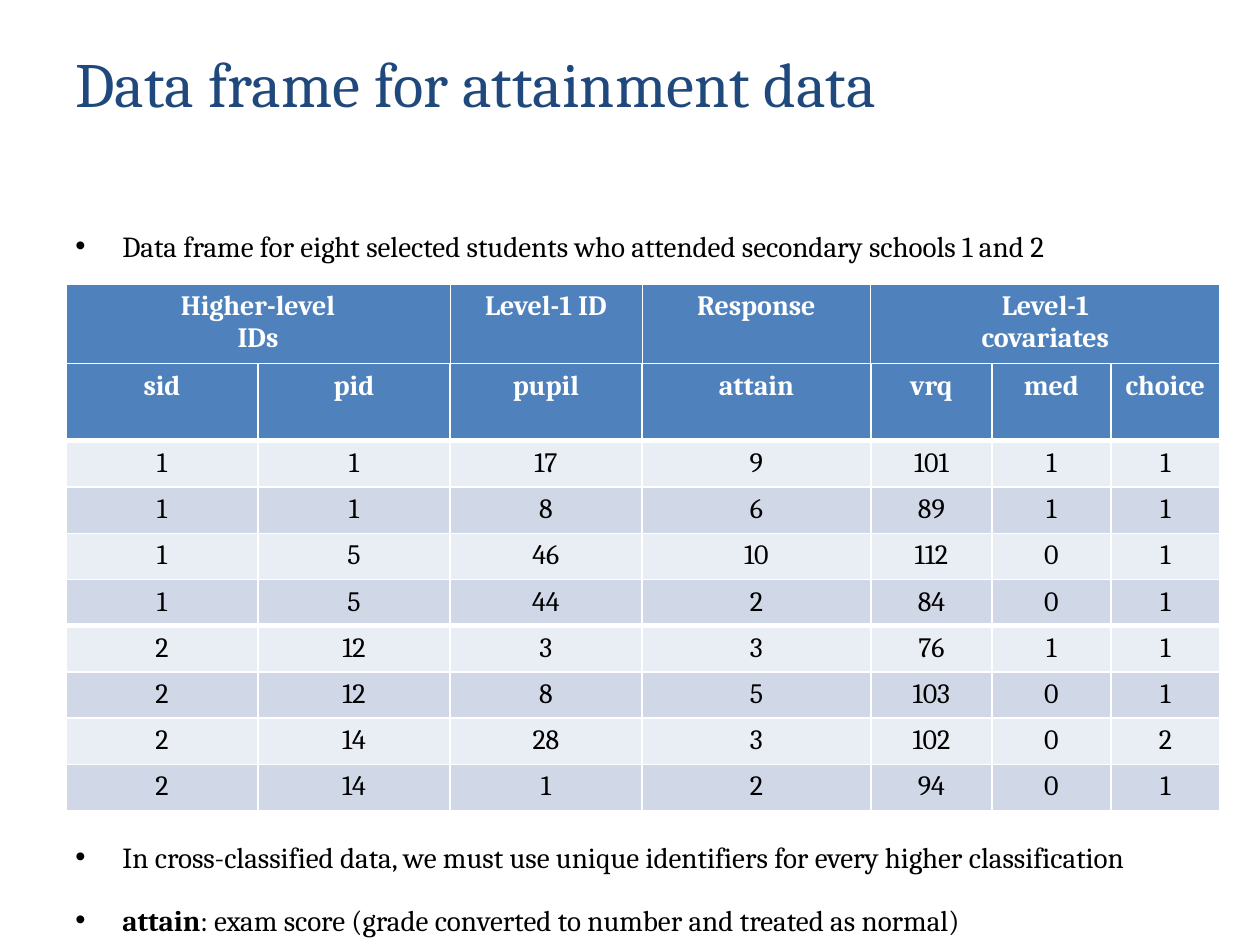
from lxml.etree import SubElement
from pptx import Presentation
from pptx.dml.color import RGBColor
from pptx.enum.text import PP_ALIGN
from pptx.oxml.ns import qn
from pptx.util import Pt

PX = 914400 // 126
FONT = "Cambria"
COLORS = {
    "title": "1F497D",
    "text": "000000",
    "header": "4F81BD",
    "white": "FFFFFF",
    "light": "E9EDF4",
    "dark": "D0D8E8",
}

COLUMN_WIDTHS = [192, 192, 192, 229, 121, 119, 109]
ROW_HEIGHTS = [79, 77] + [46] * 8
# (first column, last column, label); \v is a line break
GROUPS = [
    (0, 1, "Higher-level\vIDs"),
    (2, 2, "Level-1 ID"),
    (3, 3, "Response"),
    (4, 6, "Level-1\vcovariates"),
]
VARIABLES = ["sid", "pid", "pupil", "attain", "vrq", "med", "choice"]
STUDENTS = [
    (1, 1, 17, 9, 101, 1, 1),
    (1, 1, 8, 6, 89, 1, 1),
    (1, 5, 46, 10, 112, 0, 1),
    (1, 5, 44, 2, 84, 0, 1),
    (2, 12, 3, 3, 76, 1, 1),
    (2, 12, 8, 5, 103, 0, 1),
    (2, 14, 28, 3, 102, 0, 2),
    (2, 14, 1, 2, 94, 0, 1),
]
HEADER_ROWS = 2
THICK_BELOW = (1, 5)  # header end and end of school 1


def px(value):
    return value * PX


def color(name):
    return RGBColor.from_string(COLORS[name])


def set_font(paragraph, size, color_name, bold=None):
    font = paragraph.font
    font.name, font.size, font.bold = FONT, Pt(size), bold
    font.color.rgb = color(color_name)


def add_text_frame(slide, left, top, width, height):
    box = slide.shapes.add_textbox(px(left), px(top), px(width), px(height))
    box.text_frame.word_wrap = True
    return box.text_frame


def add_title(slide, text):
    paragraph = add_text_frame(slide, 63, 38, 1134, 157).paragraphs[0]
    paragraph.text = text
    set_font(paragraph, 36, "title")


def add_bullets(slide, top, height, items):
    """Each item is a list of (text, bold) runs."""
    frame = add_text_frame(slide, 63, top, 1134, height)
    for index, runs in enumerate(items):
        paragraph = frame.add_paragraph() if index else frame.paragraphs[0]
        for text, bold in runs:
            run = paragraph.add_run()
            run.text = text
            run.font.bold = bold
        paragraph.space_after = Pt(16)
        set_font(paragraph, 16.6, "text")
        properties = paragraph._p.get_or_add_pPr()
        properties.set("marL", str(px(47)))
        properties.set("indent", str(-px(47)))
        bullet_font = SubElement(properties, qn("a:buFont"), typeface="Arial")
        bullet = SubElement(properties, qn("a:buChar"), char="•")
        default_run = properties.find(qn("a:defRPr"))
        default_run.addprevious(bullet_font)
        default_run.addprevious(bullet)


def border_widths(row):
    """Widths in points of the left, right, top and bottom borders."""
    if row == 0:
        return 0.5, 0.5, 0.5, 0.5
    top = 0.5 if row == 1 else 3 if row - 1 in THICK_BELOW else 1
    return 1, 1, top, 3 if row in THICK_BELOW else 1


def set_borders(cell, widths):
    properties = cell._tc.get_or_add_tcPr()
    for position, (side, width) in enumerate(zip("LRTB", widths)):
        line = SubElement(properties, qn(f"a:ln{side}"), w=str(Pt(width)))
        fill = SubElement(line, qn("a:solidFill"))
        SubElement(fill, qn("a:srgbClr"), val=COLORS["white"])
        properties.insert(position, line)


def style_cell(cell, row):
    is_header = row < HEADER_ROWS
    cell.fill.solid()
    cell.fill.fore_color.rgb = color(
        "header" if is_header else ("light", "dark")[row % 2])
    paragraph = cell.text_frame.paragraphs[0]
    paragraph.alignment = PP_ALIGN.CENTER
    set_font(paragraph, 16, "white" if is_header else "text", is_header)
    set_borders(cell, border_widths(row))


def add_student_table(slide):
    table = slide.shapes.add_table(
        len(ROW_HEIGHTS), len(COLUMN_WIDTHS), px(66), px(284),
        px(sum(COLUMN_WIDTHS)), px(sum(ROW_HEIGHTS))).table
    for column, width in zip(table.columns, COLUMN_WIDTHS):
        column.width = px(width)
    for row, height in zip(table.rows, ROW_HEIGHTS):
        row.height = px(height)
    for first, last, label in GROUPS:
        table.cell(0, first).text = label
        if last > first:
            table.cell(0, first).merge(table.cell(0, last))
    for row, values in enumerate([VARIABLES, *STUDENTS], start=1):
        for column, value in enumerate(values):
            table.cell(row, column).text = str(value)
    for row in range(len(ROW_HEIGHTS)):
        for cell in table.rows[row].cells:
            style_cell(cell, row)


def main():
    presentation = Presentation()
    presentation.slide_width, presentation.slide_height = px(1260), px(945)
    slide = presentation.slides.add_slide(presentation.slide_layouts[6])
    add_title(slide, "Data frame for attainment data")
    add_bullets(slide, 222, 50, [
        [("Data frame for eight selected students who attended "
          "secondary schools 1 and 2", False)],
    ])
    add_bullets(slide, 833, 112, [
        [("In cross-classified data, we must use unique identifiers "
          "for every higher classification", False)],
        [("attain", True),
         (": exam score (grade converted to number and treated as normal)",
          False)],
    ])
    add_student_table(slide)
    presentation.save("out.pptx")


if __name__ == "__main__":
    main()
